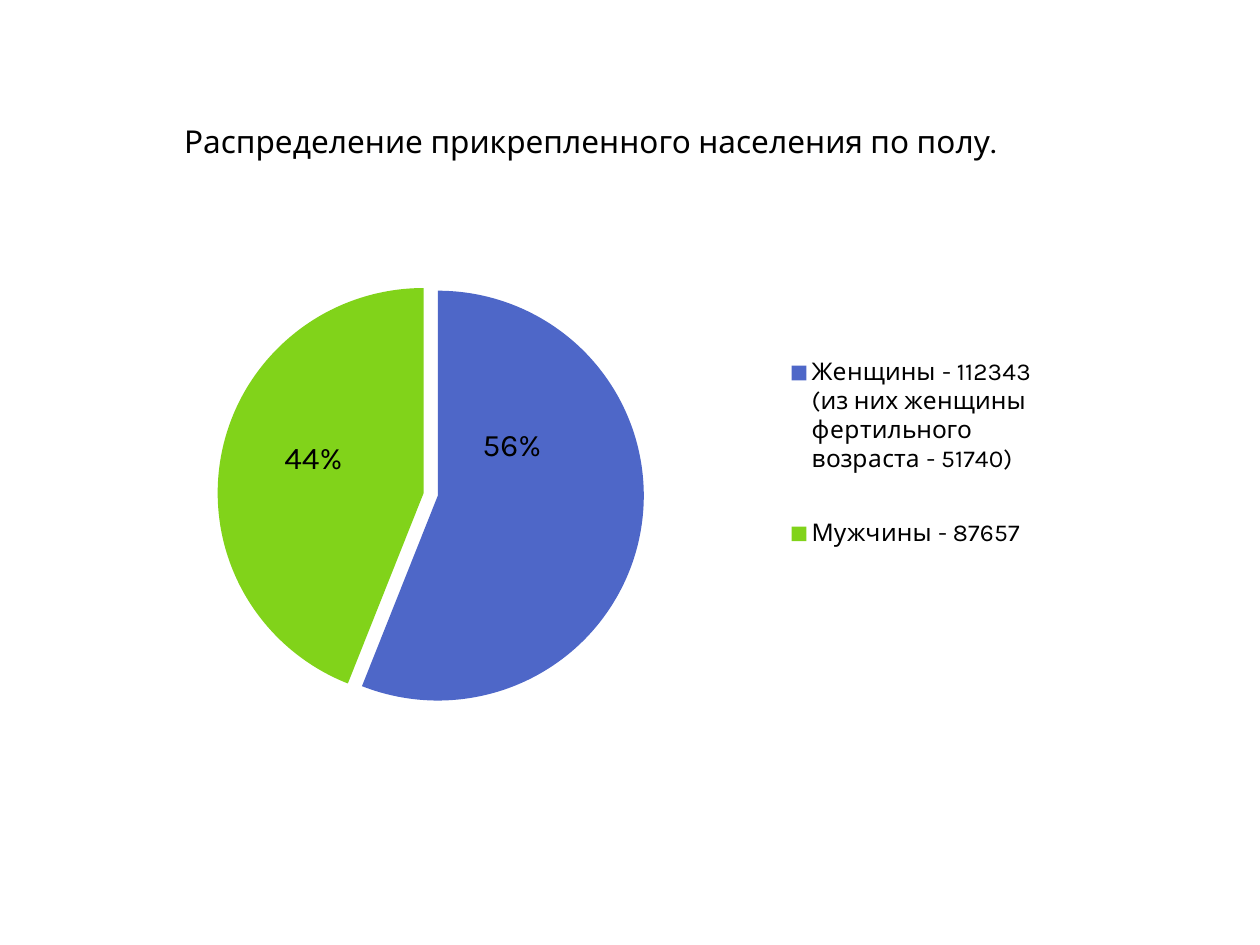
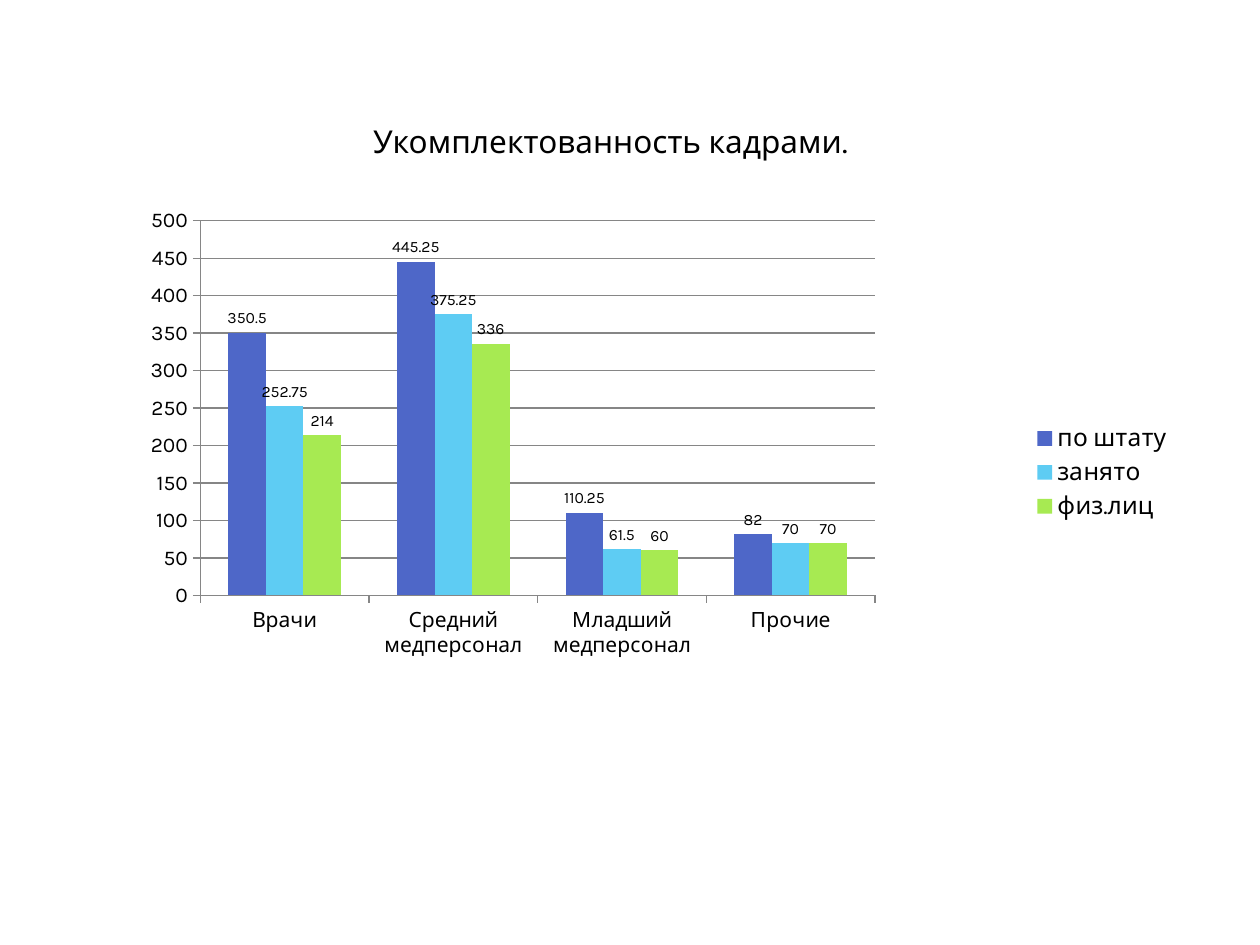
from lxml import etree
from pptx import Presentation
from pptx.chart.data import CategoryChartData
from pptx.dml.color import RGBColor
from pptx.enum.chart import XL_CHART_TYPE as ChartType
from pptx.enum.chart import XL_LABEL_POSITION as LabelPosition
from pptx.enum.chart import XL_LEGEND_POSITION as LegendPosition
from pptx.enum.chart import XL_TICK_MARK as TickMark
from pptx.enum.text import MSO_ANCHOR, PP_ALIGN
from pptx.oxml.ns import qn
from pptx.util import Inches, Pt

BLACK = RGBColor(0x00, 0x00, 0x00)
GRID_GRAY = RGBColor(0x86, 0x86, 0x86)
BLUE = RGBColor(0x4E, 0x67, 0xC8)
GREEN = RGBColor(0x81, 0xD3, 0x1A)
SKY = RGBColor(0x5E, 0xCC, 0xF3)
LIME = RGBColor(0xA7, 0xEA, 0x52)

FONT = "Karla"
TITLE_SIZE = (7.87, 0.4)
GENDERS = {
    "Женщины - 112343 (из них женщины фертильного возраста - 51740)": (56, BLUE),
    "Мужчины - 87657": (44, GREEN),
}
STAFF_GROUPS = ("Врачи", "Средний медперсонал", "Младший медперсонал", "Прочие")
STAFFING = {
    "по штату": ((350.5, 445.25, 110.25, 82), BLUE),
    "занято": ((252.75, 375.25, 61.5, 70), SKY),
    "физ.лиц": ((214, 336, 60, 70), LIME),
}


def style_font(font, size):
    """Apply the shared font at the given point size."""
    values = {"name": FONT, "size": Pt(size), "bold": False}
    for name, value in values.items():
        setattr(font, name, value)
    font.color.rgb = BLACK


def paint(target, color):
    """Fill a series or point with one colour."""
    target.format.fill.solid()
    target.format.fill.fore_color.rgb = color


def add_child(parent, tag, value=None):
    """Append a chart element with an optional val attribute."""
    child = etree.SubElement(parent, qn(f"c:{tag}"))
    if value is not None:
        child.set("val", str(value))
    return child


def make_layout(inner=False, **fractions):
    """Return a manual layout given as fractions of the chart."""
    layout = etree.Element(qn("c:layout"))
    manual = add_child(layout, "manualLayout")
    if inner:
        add_child(manual, "layoutTarget", "inner")
    if "w" in fractions:
        add_child(manual, "xMode", "edge")
        add_child(manual, "yMode", "edge")
    for name, value in fractions.items():
        add_child(manual, name, value)
    return layout


def place_plot(chart, x, y, w, h):
    """Fix the inner plot area of a chart."""
    area = chart.element.find(f".//{qn('c:plotArea')}")
    for layout in area.findall(qn("c:layout")):
        area.remove(layout)
    area.insert(0, make_layout(inner=True, x=x, y=y, w=w, h=h))


def add_title(slide, left, top, text):
    """Move and format the title placeholder."""
    title = slide.shapes.title
    box = (left, top, *TITLE_SIZE)
    for name, value in zip(("left", "top", "width", "height"), box):
        setattr(title, name, Inches(value))
    frame = title.text_frame
    frame.word_wrap = True
    frame.vertical_anchor = MSO_ANCHOR.TOP
    paragraph = frame.paragraphs[0]
    paragraph.text = text
    paragraph.alignment = PP_ALIGN.CENTER
    style_font(paragraph.runs[0].font, TITLE_SIZE[1] * 45)


def add_chart(slide, box, kind, data):
    """Add a chart with the shared font and a legend on the right."""
    frame = slide.shapes.add_chart(kind, *map(Inches, box), data)
    chart = frame.chart
    chart.has_title = False
    style_font(chart.font, 18)
    chart.has_legend = True
    chart.legend.position = LegendPosition.RIGHT
    chart.legend.include_in_layout = False
    style_font(chart.legend.font, 14)
    return chart


def shift_label(labels, index, x, y):
    """Offset one percentage label from the centre of its slice."""
    label = etree.Element(qn("c:dLbl"))
    add_child(label, "idx", index)
    label.append(make_layout(x=x, y=y))
    add_child(label, "dLblPos", "ctr")
    for name in ("LegendKey", "Val", "CatName", "SerName", "Percent", "BubbleSize"):
        add_child(label, f"show{name}", int(name == "Percent"))
    labels.insert(index, label)


def add_gender_pie(slide, box):
    """Draw the pie of the population by gender."""
    data = CategoryChartData()
    data.categories = list(GENDERS)
    data.add_series("Series 1", [share for share, color in GENDERS.values()])
    chart = add_chart(slide, box, ChartType.PIE, data)
    place_plot(chart, 0, 0.17, 0.62, 0.83)
    legend_position = chart.element.find(f".//{qn('c:legendPos')}")
    legend_position.addnext(make_layout(x=0.7, y=0.22, w=0.3, h=0.57))

    plot = chart.plots[0]
    plot.vary_by_categories = True
    series = plot.series[0]
    for index, (share, color) in enumerate(GENDERS.values()):
        paint(series.points[index], color)
    first_point = series.points[0].format.fill and series._element.find(qn("c:dPt"))
    explosion = etree.Element(qn("c:explosion"))
    explosion.set("val", "7")
    first_point.find(qn("c:spPr")).addprevious(explosion)

    labels = series.data_labels
    labels.show_value = False
    labels.show_percentage = True
    labels.position = LabelPosition.CENTER
    style_font(labels.font, 18)
    labels_element = chart.element.find(f".//{qn('c:ser')}/{qn('c:dLbls')}")
    for index, offset in enumerate(((-0.03, -0.14), (-0.01, -0.03))):
        shift_label(labels_element, index, *offset)


def format_axes(chart):
    """Style both axes and the horizontal gridlines."""
    value_axis = chart.value_axis
    for name, value in {"minimum_scale": 0, "maximum_scale": 500, "major_unit": 50,
                        "has_major_gridlines": True}.items():
        setattr(value_axis, name, value)
    chart.category_axis.has_major_gridlines = False
    for axis in (chart.category_axis, value_axis):
        axis.major_tick_mark = TickMark.OUTSIDE
        axis.minor_tick_mark = TickMark.NONE
        style_font(axis.tick_labels.font, 12)
    for target in (chart.category_axis, value_axis, value_axis.major_gridlines):
        target.format.line.color.rgb = GRID_GRAY
        target.format.line.width = Pt(0.75)


def add_staffing_columns(slide, box):
    """Draw the clustered columns of staffing by group."""
    data = CategoryChartData()
    data.categories = STAFF_GROUPS
    for name, (values, color) in STAFFING.items():
        data.add_series(name, values)
    chart = add_chart(slide, box, ChartType.COLUMN_CLUSTERED, data)
    place_plot(chart, 0.08, 0.05, 0.63, 0.67)
    format_axes(chart)
    plot = chart.plots[0]
    plot.vary_by_categories = False
    plot.gap_width = 150
    plot.overlap = 0
    for series, (values, color) in zip(plot.series, STAFFING.values()):
        paint(series, color)
        series.data_labels.show_value = True
        series.data_labels.position = LabelPosition.OUTSIDE_END
        style_font(series.data_labels.font, 9)


def main():
    """Build both slides and save the presentation."""
    presentation = Presentation()
    presentation.slide_width = Inches(10)
    presentation.slide_height = Inches(7.5)
    title_only = presentation.slide_layouts[5]

    gender_slide = presentation.slides.add_slide(title_only)
    add_title(gender_slide, 0.75, 0.92, "Распределение прикрепленного населения по полу.")
    add_gender_pie(gender_slide, (1.14, 1.62, 7.17, 3.94))

    staffing_slide = presentation.slides.add_slide(title_only)
    add_title(staffing_slide, 0.91, 0.92, "Укомплектованность кадрами.")
    add_staffing_columns(staffing_slide, (0.91, 1.53, 8.5, 4.44))

    presentation.save("out.pptx")


if __name__ == "__main__":
    main()
